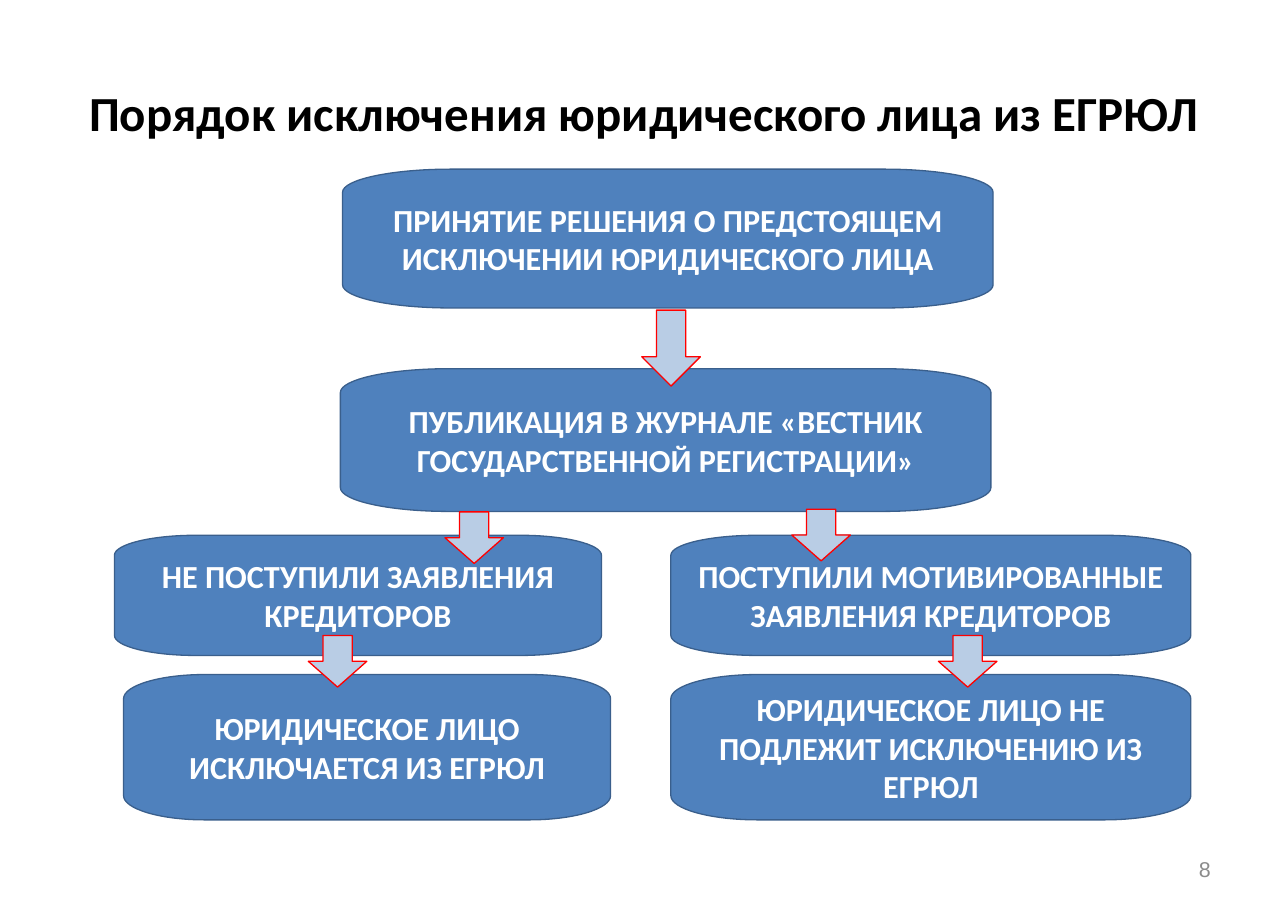
from lxml import etree
from pptx import Presentation
from pptx.dml.color import RGBColor
from pptx.enum.shapes import MSO_SHAPE
from pptx.enum.text import MSO_ANCHOR, MSO_AUTO_SIZE, PP_ALIGN
from pptx.oxml.ns import qn
from pptx.util import Cm, Pt

DOWN_ARROW = MSO_SHAPE.DOWN_ARROW
MIDDLE = MSO_ANCHOR.MIDDLE
NO_AUTOFIT = MSO_AUTO_SIZE.NONE
CENTER, RIGHT = PP_ALIGN.CENTER, PP_ALIGN.RIGHT

COLORS = {
    "title": "000000",
    "step": "4F81BD",
    "step_line": "3A5F8C",
    "step_text": "FFFFFF",
    "arrow": "B9CDE5",
    "arrow_line": "FF0000",
    "number": "8C8C8C",
}
TITLE_ONLY_LAYOUT = 5
CURVE_PULL = 0.55
ARROW_WIDTH = 1.35


def color(name):
    return RGBColor.from_string(COLORS[name])


def write_text(shape, text, size, color_name, font="Calibri", bold=True,
               alignment=CENTER):
    frame = shape.text_frame
    frame.word_wrap = True
    frame.auto_size = NO_AUTOFIT
    frame.vertical_anchor = MIDDLE
    paragraph = frame.paragraphs[0]
    paragraph.alignment = alignment
    run = paragraph.add_run()
    run.text = text
    run.font.name = font
    run.font.size = Pt(size)
    run.font.bold = bold
    run.font.color.rgb = color(color_name)


def set_insets(shape):
    frame = shape.text_frame
    frame.margin_left = frame.margin_right = Cm(0.29)
    frame.margin_top = frame.margin_bottom = Cm(0.14)


def paint(shape, fill, line):
    shape.shadow.inherit = False
    shape.fill.solid()
    shape.fill.fore_color.rgb = color(fill)
    shape.line.color.rgb = color(line)
    shape.line.width = Pt(0.85)


def round_corners(shape):
    """Turn every other segment of the outline into a quarter ellipse."""
    segments = list(shape.element.iter(qn("a:lnTo")))
    ends = [(int(point.get("x")), int(point.get("y")))
            for point in shape.element.iter(qn("a:pt"))]
    for index in range(0, len(segments), 2):
        start, end = ends[index], ends[index + 1]
        leaves_vertically = index % 4 == 0
        vertex = (start[0], end[1]) if leaves_vertically else (end[0], start[1])
        curve = etree.Element(qn("a:cubicBezTo"))
        controls = [[round(a + (b - a) * CURVE_PULL) for a, b in zip(anchor, vertex)]
                    for anchor in (start, end)]
        for x, y in (*controls, end):
            etree.SubElement(curve, qn("a:pt"), x=str(x), y=str(y))
        segments[index].getparent().replace(segments[index], curve)


def add_step(slide, box, text):
    """Box whose corners take a sixth of each side."""
    left, top, width, height = box
    right, bottom = left + width, top + height
    near_x, far_x = left + width / 6, right - width / 6
    near_y, far_y = top + height / 6, bottom - height / 6
    outline = [(left, near_y), (near_x, top), (far_x, top), (right, near_y),
               (right, far_y), (far_x, bottom), (near_x, bottom), (left, far_y)]
    points = [(Cm(x), Cm(y)) for x, y in outline]
    builder = slide.shapes.build_freeform(*points[0])
    builder.add_line_segments(points[1:], close=True)
    shape = builder.convert_to_shape()
    round_corners(shape)
    paint(shape, "step", "step_line")
    write_text(shape, text, 21, "step_text")


def add_arrow(slide, left, top, height=1.19):
    arrow = slide.shapes.add_shape(
        DOWN_ARROW, Cm(left), Cm(top), Cm(ARROW_WIDTH), Cm(height))
    paint(arrow, "arrow", "arrow_line")


def add_title(slide, box, text):
    title = slide.shapes.title
    title.left, title.top, title.width, title.height = map(Cm, box)
    write_text(title, text, 32, "title")
    set_insets(title)


def add_common_steps(slide, box):
    """Decision and publication, one above the other."""
    left, top, width, height = box
    add_step(slide, (left + 0.05, top, width, 3.2),
             "ПРИНЯТИЕ РЕШЕНИЯ О ПРЕДСТОЯЩЕМ ИСКЛЮЧЕНИИ ЮРИДИЧЕСКОГО ЛИЦА")
    add_step(slide, (left, top + height - 3.29, width, 3.29),
             "ПУБЛИКАЦИЯ В ЖУРНАЛЕ «ВЕСТНИК ГОСУДАРСТВЕННОЙ РЕГИСТРАЦИИ»")
    add_arrow(slide, left + 6.95, top + 3.25, 1.75)


def add_branch(slide, box, condition, outcome, entry, link, outcome_shift=0):
    """Condition above its outcome; entry and link place the two arrows."""
    left, top, width, height = box
    add_step(slide, (left, top, width, 2.77), condition)
    add_step(slide, (left + outcome_shift, top + height - 3.35, width, 3.35), outcome)
    entry_left, entry_rise = entry
    add_arrow(slide, left + entry_left, top - entry_rise)
    add_arrow(slide, left + link, top + 2.31)


def add_slide_number(slide, box, text):
    number = slide.shapes.add_textbox(*map(Cm, box))
    write_text(number, text, 14, "number", "Arial", False, RIGHT)
    set_insets(number)


def main():
    presentation = Presentation()
    presentation.slide_width, presentation.slide_height = Cm(29.7), Cm(21)
    slide = presentation.slides.add_slide(
        presentation.slide_layouts[TITLE_ONLY_LAYOUT])

    add_title(slide, (1.5, 0.84, 26.72, 3.5),
              "Порядок исключения юридического лица из ЕГРЮЛ")
    add_common_steps(slide, (7.85, 3.9, 15, 7.89))
    # No creditor claims
    add_branch(slide, (2.64, 12.34, 11.23, 6.56),
               "НЕ ПОСТУПИЛИ ЗАЯВЛЕНИЯ КРЕДИТОРОВ",
               "ЮРИДИЧЕСКОЕ ЛИЦО ИСКЛЮЧАЕТСЯ ИЗ ЕГРЮЛ",
               entry=(7.62, 0.54), link=4.47, outcome_shift=0.21)
    # Creditor claims received
    add_branch(slide, (15.47, 12.34, 11.99, 6.56),
               "ПОСТУПИЛИ МОТИВИРОВАННЫЕ ЗАЯВЛЕНИЯ КРЕДИТОРОВ",
               "ЮРИДИЧЕСКОЕ ЛИЦО НЕ ПОДЛЕЖИТ ИСКЛЮЧЕНИЮ ИЗ ЕГРЮЛ",
               entry=(2.79, 0.6), link=6.17)
    add_slide_number(slide, (21.28, 19.46, 6.93, 1.12), "8")

    presentation.save("out.pptx")


if __name__ == "__main__":
    main()
